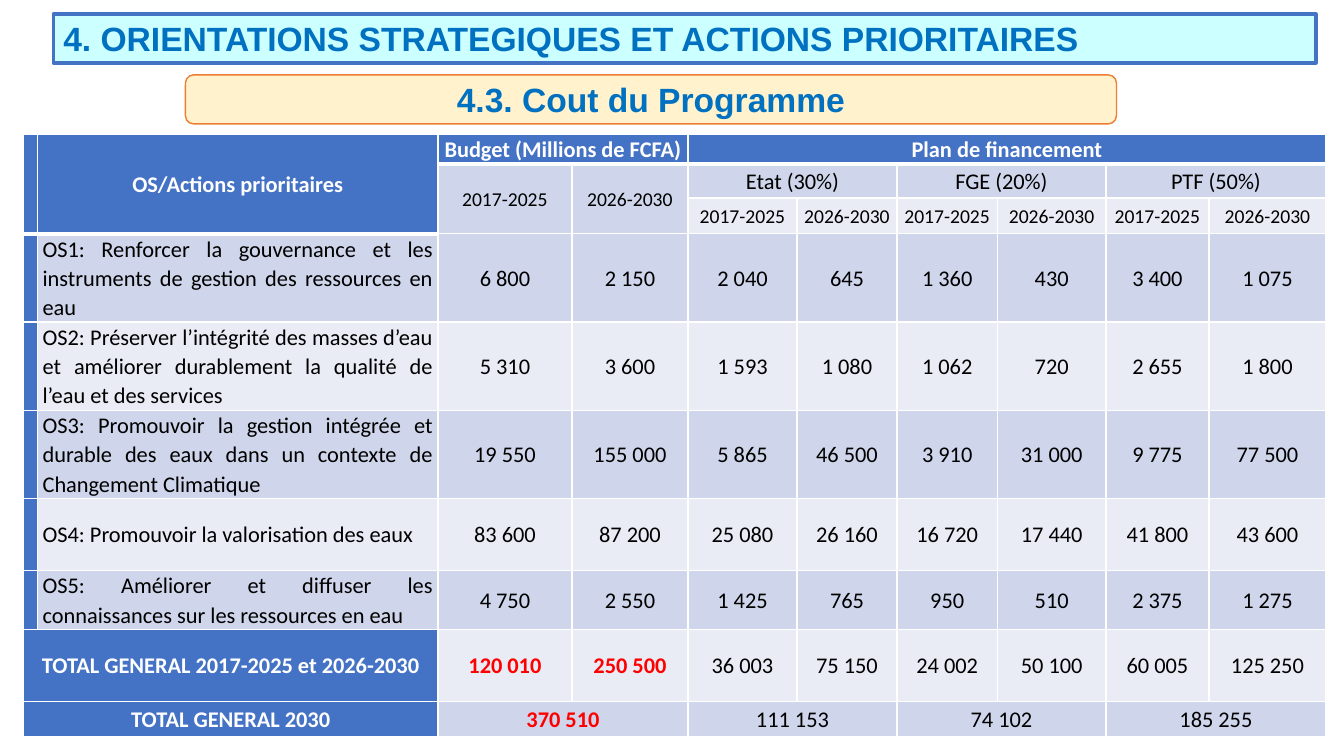
from dataclasses import dataclass

from lxml import etree
from pptx import Presentation
from pptx import util as u
from pptx.dml import color
from pptx.enum import shapes, text
from pptx.oxml import ns

Pt = u.Pt
ALIGN = text.PP_ALIGN


@dataclass(frozen=True)
class Theme:
    blue: str = "4472C4"
    orange: str = "ED7D31"
    aqua: str = "CCFFFF"
    cream: str = "FFF2CC"
    heading: str = "0070C0"
    band_dark: str = "CFD5EA"
    band_light: str = "E9EBF5"
    white: str = "FFFFFF"
    black: str = "000000"
    red: str = "FF0000"
    heading_font: str = "Arial"
    body_font: str = "Calibri"
    heading_size: float = 24
    body_size: float = 16
    period_size: float = 14


PERIODS = ["2017-2025", "2026-2030"]
COLUMN_WIDTHS = [9.6, 286, 95.7, 82.9, 77.9, 71.4, 71.8, 77.5, 73.6, 83.6]
ROW_HEIGHTS = [21, 24.5, 25.5, 63, 63, 63, 51.5, 42, 51.5, 25]
OBJECTIVES = [
    ("OS1: Renforcer la gouvernance et les instruments de gestion des ressources en eau",
     "6 800", "2 150", "2 040", "645", "1 360", "430", "3 400", "1 075"),
    ("OS2: Préserver l’intégrité des masses d’eau et améliorer durablement la qualité "
     "de l’eau et des services",
     "5 310", "3 600", "1 593", "1 080", "1 062", "720", "2 655", "1 800"),
    ("OS3: Promouvoir la gestion intégrée et durable des eaux dans un contexte de "
     "Changement Climatique",
     "19 550", "155 000", "5 865", "46 500", "3 910", "31 000", "9 775", "77 500"),
    ("OS4: Promouvoir la valorisation des eaux",
     "83 600", "87 200", "25 080", "26 160", "16 720", "17 440", "41 800", "43 600"),
    ("OS5: Améliorer et diffuser les connaissances sur les ressources en eau",
     "4 750", "2 550", "1 425", "765", "950", "510", "2 375", "1 275"),
]
BUDGET_ROWS = [
    ["", "OS/Actions prioritaires", "Budget (Millions de FCFA)", "",
     "Plan de financement", "", "", "", "", ""],
    ["", "", *PERIODS, "Etat (30%)", "", "FGE (20%)", "", "PTF (50%)", ""],
    ["", "", "", "", *PERIODS * 3],
    *[["", *objective] for objective in OBJECTIVES],
    ["TOTAL GENERAL 2017-2025 et 2026-2030", "", "120 010", "250 500", "36 003",
     "75 150", "24 002", "50 100", "60 005", "125 250"],
    ["TOTAL GENERAL 2030", "", "370 510", "", "111 153", "", "74 102", "", "185 255", ""],
]
FIRST_OBJECTIVE = 3
TOTALS = FIRST_OBJECTIVE + len(OBJECTIVES)
GRAND_TOTAL = TOTALS + 1
# First row, first column, last row, last column
MERGES = [
    (0, 0, 2, 0), (0, 1, 2, 1), (0, 2, 0, 3), (0, 4, 0, 9),
    (1, 2, 2, 2), (1, 3, 2, 3),
    *[(1, c, 1, c + 1) for c in (4, 6, 8)],
    (TOTALS, 0, TOTALS, 1),
    *[(GRAND_TOTAL, c, GRAND_TOTAL, c + 1) for c in (0, 2, 4, 6, 8)],
]


def rgb(value):
    return color.RGBColor.from_string(value)


def write(tf, content, *, size, font, fill, bold=False, align=ALIGN.CENTER, spacing=1.0):
    p = tf.paragraphs[0]
    p.alignment, p.line_spacing = align, spacing
    r = p.add_run()
    r.text = content
    r.font.size, r.font.name, r.font.bold = Pt(size), font, bold
    r.font.color.rgb = rgb(fill)


def border_cell(cell, line, bottom):
    """Draw the four borders in one colour, with its own width at the bottom."""
    tc_pr = cell._tc.get_or_add_tcPr()
    for i, side in enumerate(("lnL", "lnR", "lnT", "lnB")):
        ln = etree.Element(ns.qn("a:" + side), w=str(Pt(bottom if side == "lnB" else 1)))
        fill = etree.SubElement(ln, ns.qn("a:solidFill"))
        etree.SubElement(fill, ns.qn("a:srgbClr"), val=line)
        tc_pr.insert(i, ln)


class SlideBuilder:
    def __init__(self, prs, theme):
        self.theme = theme
        self.slide = prs.slides.add_slide(prs.slide_layouts[5])

    def format_banner(self, sp, content, fill, line, width, align):
        t = self.theme
        sp.fill.solid()
        sp.fill.fore_color.rgb = rgb(fill)
        sp.line.color.rgb = rgb(line)
        sp.line.width = Pt(width)
        sp.shadow.inherit = False
        tf = sp.text_frame
        tf.word_wrap = True
        tf.auto_size = text.MSO_AUTO_SIZE.NONE
        tf.vertical_anchor = text.MSO_ANCHOR.MIDDLE
        write(tf, content, size=t.heading_size, font=t.heading_font, fill=t.heading,
              bold=True, align=align)

    def title(self, content, x, y, w, h):
        sp = self.slide.shapes.title
        sp.left, sp.top, sp.width, sp.height = Pt(x), Pt(y), Pt(w), Pt(h)
        geom = etree.SubElement(sp._element.spPr, ns.qn("a:prstGeom"), prst="roundRect")
        av = etree.SubElement(geom, ns.qn("a:avLst"))
        etree.SubElement(av, ns.qn("a:gd"), name="adj", fmla="val 50000")
        self.format_banner(sp, content, self.theme.aqua, self.theme.blue, 2.25, ALIGN.LEFT)

    def subtitle(self, content, x, y, w, h):
        sp = self.slide.shapes.add_shape(
            shapes.MSO_SHAPE.ROUNDED_RECTANGLE, Pt(x), Pt(y), Pt(w), Pt(h))
        self.format_banner(sp, content, self.theme.cream, self.theme.orange, 1, ALIGN.CENTER)

    def budget_table(self, x, y):
        table = self.slide.shapes.add_table(
            len(ROW_HEIGHTS), len(COLUMN_WIDTHS), Pt(x), Pt(y),
            Pt(sum(COLUMN_WIDTHS)), Pt(sum(ROW_HEIGHTS))).table
        for column, width in zip(table.columns, COLUMN_WIDTHS):
            column.width = Pt(width)
        for row, height in zip(table.rows, ROW_HEIGHTS):
            row.height = Pt(height)
        for top, left, bottom, right in MERGES:
            table.cell(top, left).merge(table.cell(bottom, right))
        for r, row in enumerate(BUDGET_ROWS):
            for c, content in enumerate(row):
                self.budget_cell(table.cell(r, c), r, c, content)

    def budget_cell(self, cell, r, c, content):
        t = self.theme
        is_objective = FIRST_OBJECTIVE <= r < TOTALS
        is_header = r == 0 or c == 0 or (c == 1 and not is_objective)
        is_budget_total = r >= TOTALS and c in (2, 3)
        band = t.band_dark if r % 2 else t.band_light
        ink = t.white if is_header else t.red if is_budget_total else t.black

        cell.margin_left = cell.margin_right = Pt(3.6)
        cell.margin_top = cell.margin_bottom = 0
        cell.vertical_anchor = text.MSO_ANCHOR.MIDDLE
        cell.fill.solid()
        cell.fill.fore_color.rgb = rgb(t.blue if is_header else band)
        ends_header = r == 0 or (r == FIRST_OBJECTIVE - 1 and c < 2)
        border_cell(cell, t.white, 3 if ends_header else 1)
        if content:
            write(cell.text_frame, content, font=t.body_font, fill=ink,
                  size=t.period_size if content in PERIODS else t.body_size,
                  bold=is_header or is_budget_total, spacing=1.07,
                  align=ALIGN.JUSTIFY if c == 1 and is_objective else ALIGN.CENTER)


def main():
    prs = Presentation()
    prs.slide_width, prs.slide_height = Pt(960), Pt(540)
    builder = SlideBuilder(prs, Theme())
    builder.title("4. ORIENTATIONS STRATEGIQUES ET ACTIONS PRIORITAIRES", 38, 10, 902, 35)
    builder.subtitle("4.3. Cout du Programme", 132.5, 53.5, 665, 35)
    builder.budget_table(16.8, 96)
    prs.save("out.pptx")


if __name__ == "__main__":
    main()
